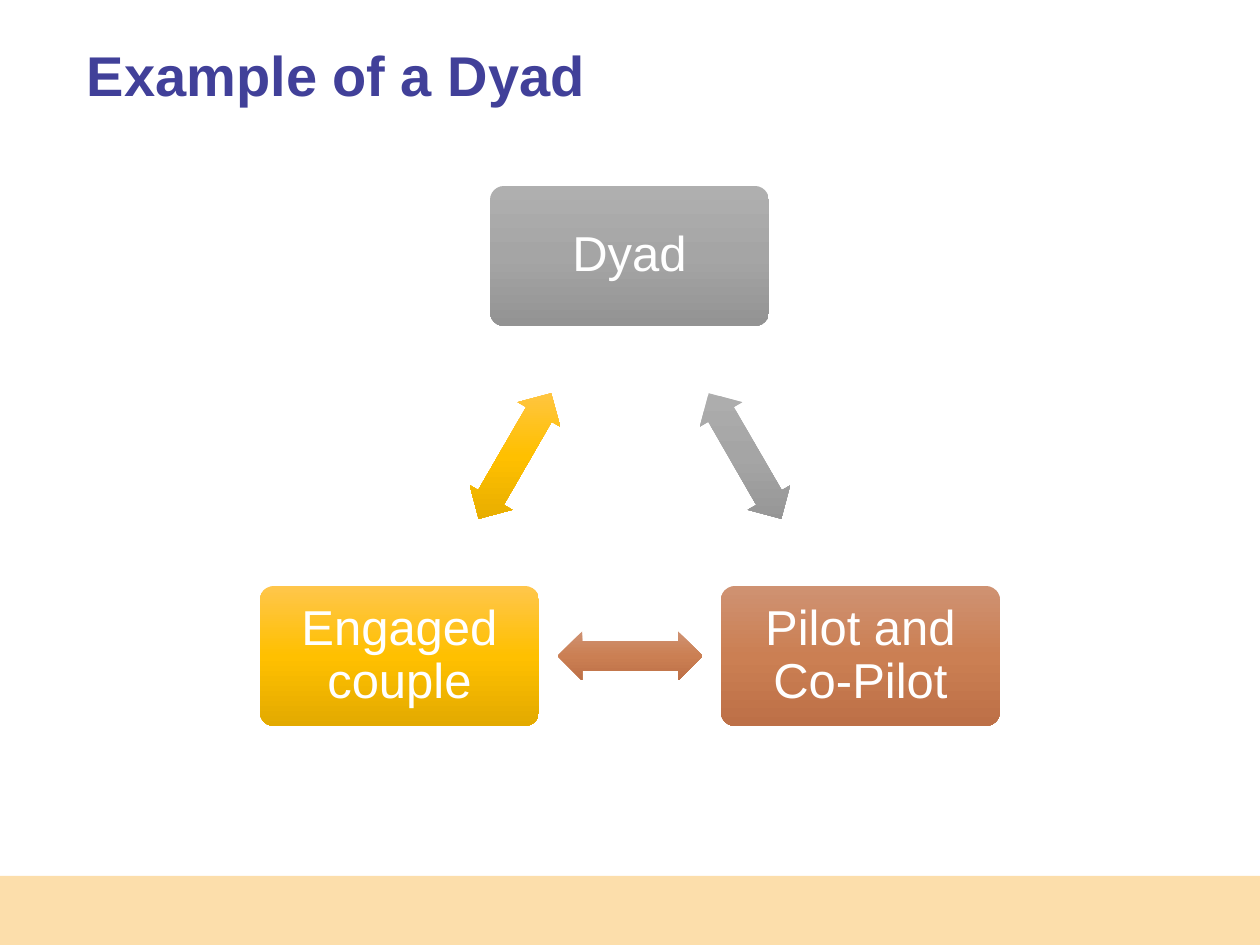
from copy import deepcopy
from pptx import Presentation
from pptx.dml.color import RGBColor
from pptx.enum.shapes import MSO_SHAPE as SHAPE
from pptx.enum.text import MSO_ANCHOR as ANCHOR, PP_ALIGN as ALIGN
from pptx.oxml.ns import qn
from pptx.util import Emu, Pt

SCALE = 914400 / 126
COLORS = {"title": "414099", "band": "FCDEAB", "text": "FFFFFF"}
GRADIENTS = {
    "gray": ["AFAFAF", "A5A5A5", "939393"],
    "orange": ["CF9272", "CB7F53", "BD7047"],
    "yellow": ["FFC64B", "FFC000", "E3AA00"],
}
BOX_W, BOX_H = 279, 140
ARROW_W, ARROW_H = 145, 49

prs = Presentation()
prs.slide_width = Emu(round(1260 * SCALE))
prs.slide_height = Emu(round(945 * SCALE))
slide = prs.slides.add_slide(prs.slide_layouts[6])


def add_shape(kind, *box, gradient=None):
    s = slide.shapes.add_shape(kind, *[Emu(round(n * SCALE)) for n in box])
    s.shadow.inherit = False
    s.line.fill.background()
    if gradient:
        s.fill.gradient()
        s.fill.gradient_angle = 270
        grad = s._element.spPr.find(qn("a:gradFill"))
        grad.set("rotWithShape", "0")
        stops = grad.find(qn("a:gsLst"))
        stops.insert(1, deepcopy(stops[0]))
        for i, stop in enumerate(s.fill.gradient_stops):
            stop.position = i / 2
            stop.color.rgb = RGBColor.from_string(GRADIENTS[gradient][i])
    return s


def set_text(s, text, size, color, align, inset, bold=False):
    tf = s.text_frame
    tf.word_wrap = True
    tf.vertical_anchor = ANCHOR.MIDDLE
    tf.margin_left = tf.margin_right = Emu(round(inset * SCALE))
    tf.margin_top = tf.margin_bottom = Emu(round(inset * SCALE))
    tf.text = text
    p = tf.paragraphs[0]
    p.alignment = align
    p.line_spacing = 0.9
    r = p.runs[0]
    r.font.name = "Arial"
    r.font.size = Pt(size)
    r.font.bold = bold
    r.font.color.rgb = RGBColor.from_string(COLORS[color])


band = add_shape(SHAPE.RECTANGLE, 0, 876, 1260, 69)
band.fill.solid()
band.fill.fore_color.rgb = RGBColor.from_string(COLORS["band"])

title = slide.shapes.add_textbox(*[Emu(round(n * SCALE)) for n in (87, 0, 1086, 157)])
set_text(title, "Example of a Dyad", 32, "title", ALIGN.LEFT, 0, True)

nodes = [
    ("Dyad", "gray", 490, 186, 745, 456, 60),
    ("Pilot and Co-Pilot", "orange", 721, 586, 630, 656, 180),
    ("Engaged couple", "yellow", 260, 586, 515, 456, 300),
]
for text, gradient, x, y, arrow_x, arrow_y, angle in nodes:
    s = add_shape(SHAPE.ROUNDED_RECTANGLE, x, y, BOX_W, BOX_H, gradient=gradient)
    s.adjustments[0] = 0.1
    set_text(s, text, 28, "text", ALIGN.CENTER, 15)

    arrow = add_shape(SHAPE.LEFT_RIGHT_ARROW, arrow_x - ARROW_W / 2, arrow_y - ARROW_H / 2,
                      ARROW_W, ARROW_H, gradient=gradient)
    arrow.adjustments[0] = 0.6
    arrow.adjustments[1] = 0.5
    arrow.rotation = angle

prs.save("out.pptx")
